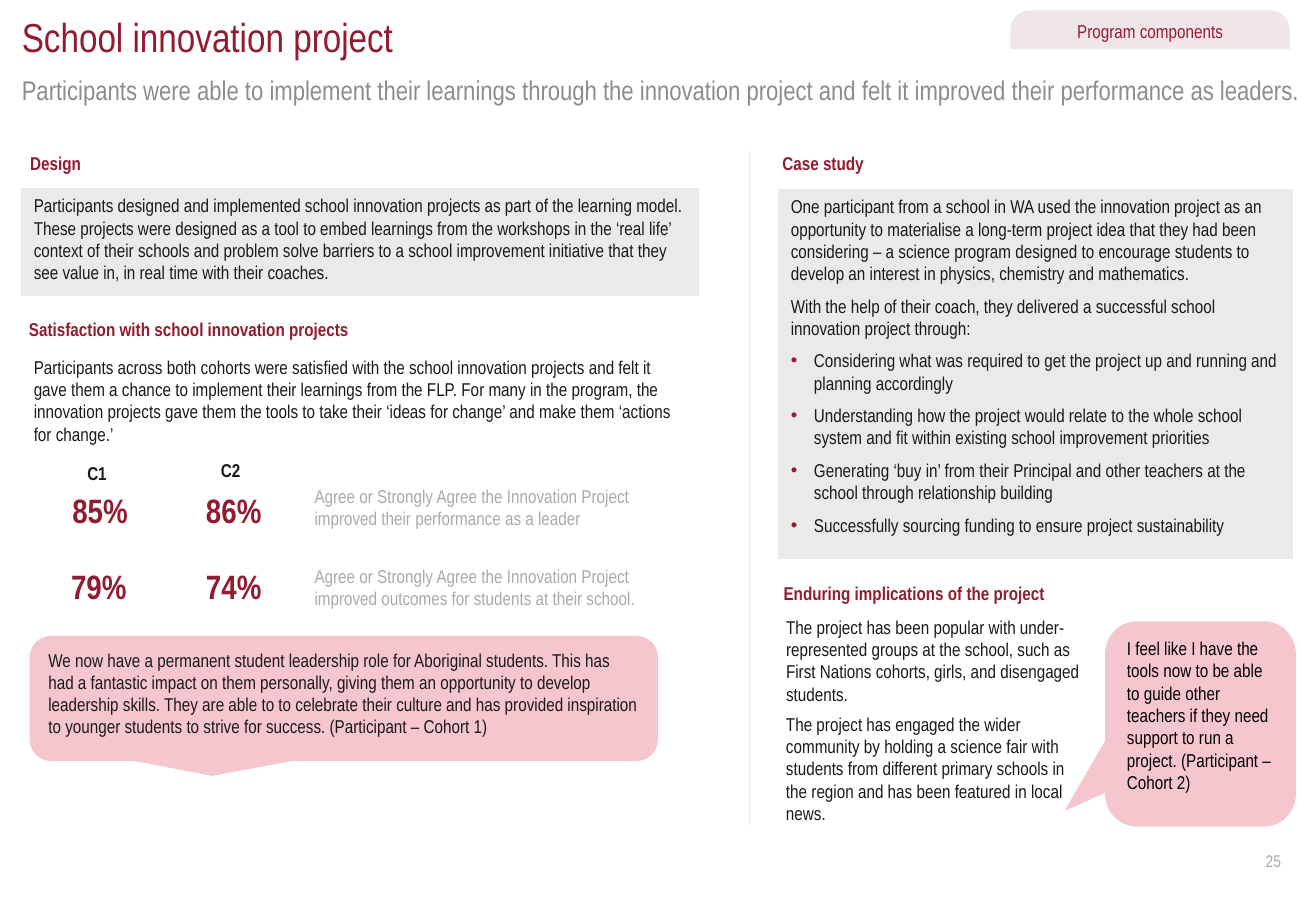
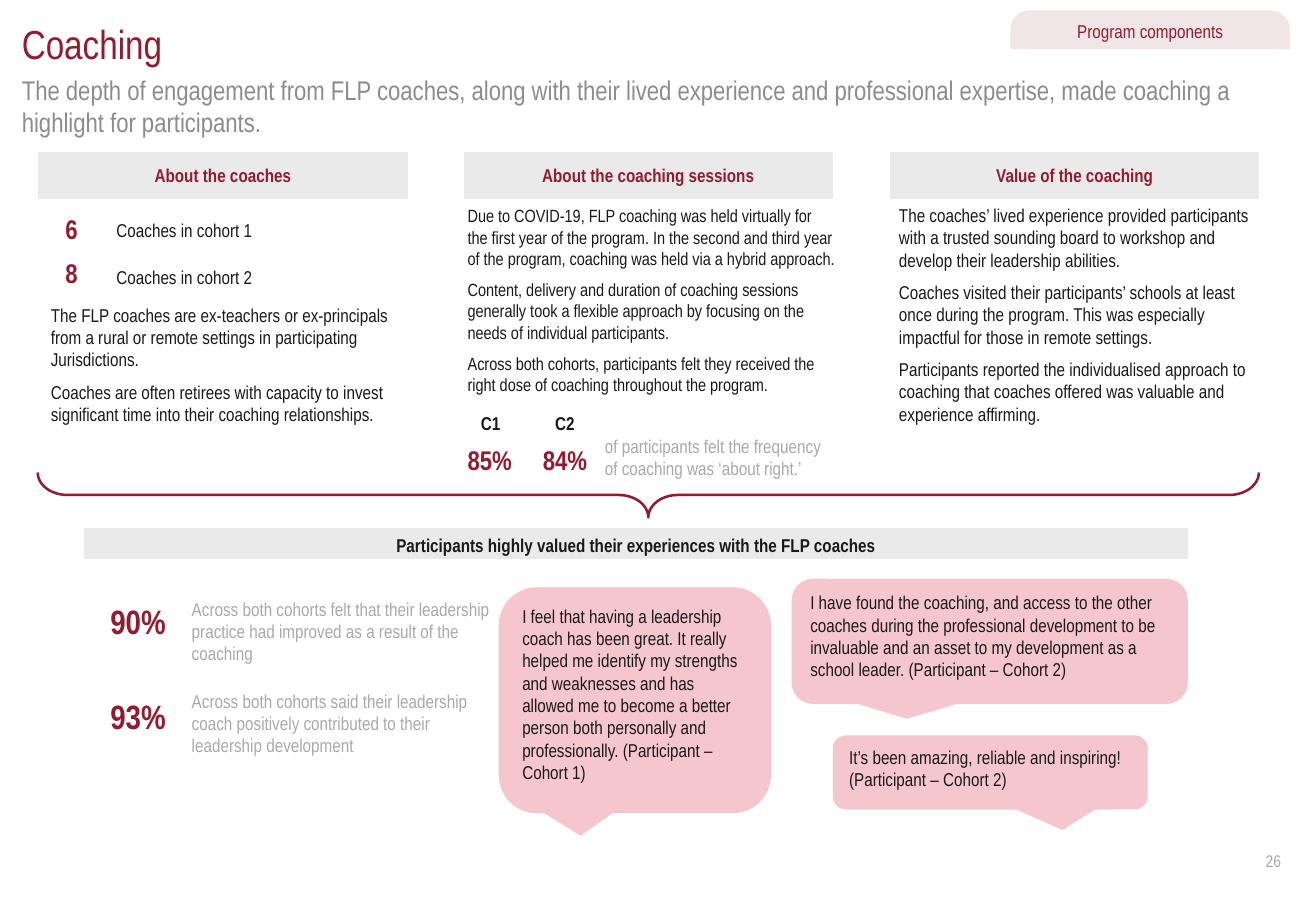
from lxml import etree
from pptx import Presentation
from pptx.dml.color import RGBColor
from pptx.enum.shapes import MSO_CONNECTOR, MSO_SHAPE
from pptx.enum.text import MSO_ANCHOR, PP_ALIGN
from pptx.oxml.ns import qn
from pptx.util import Emu, Pt

# Shared look
PX = 9144  # 100 px to the inch
FONT = "Arial Narrow"
MAROON = RGBColor(0x93, 0x1B, 0x2F)
BLUSH = RGBColor(0xF0, 0xE6, 0xE7)
PINK = RGBColor(0xF5, 0xC6, 0xCD)
PANEL = RGBColor(0xEA, 0xEA, 0xEA)
INK = RGBColor(0x19, 0x19, 0x19)
BLACK = RGBColor(0, 0, 0)
SUBTITLE = RGBColor(0x8C, 0x8C, 0x8C)
MUTED = RGBColor(0xA9, 0xA9, 0xA9)
LEFT, CENTER, RIGHT = PP_ALIGN.LEFT, PP_ALIGN.CENTER, PP_ALIGN.RIGHT
TOP, MIDDLE, BOTTOM = MSO_ANCHOR.TOP, MSO_ANCHOR.MIDDLE, MSO_ANCHOR.BOTTOM
RECT, TAB = MSO_SHAPE.RECTANGLE, MSO_SHAPE.ROUND_2_SAME_RECTANGLE
CALLOUT, BRACE = MSO_SHAPE.ROUNDED_RECTANGULAR_CALLOUT, MSO_SHAPE.RIGHT_BRACE
STRAIGHT = MSO_CONNECTOR.STRAIGHT

HEADING = dict(color=MAROON, bold=True)
LABEL = dict(bold=True, wrap=False)
FIGURE = dict(size=20, color=MAROON, bold=True)
SMALL_FIGURE = dict(size=16, color=MAROON, bold=True, wrap=False)

# Content: boxes are (left, top, width, height) in px
SECTION = "Program components"

PROJECT = dict(
    title="School innovation project", title_y=10,
    subtitle="Participants were able to implement their learnings through the innovation project "
             "and felt it improved their performance as leaders.",
    subtitle_box=(18, 61, 1057, 54), subtitle_anchor=TOP, number="25")
PROJECT_HEADINGS = [
    ("Design", (15, 120, 66, 29)),
    ("Satisfaction with school innovation projects", (14, 257, 288, 29)),
    ("Case study", (634, 120, 334, 29)),
    ("Enduring implications of the project", (635, 474, 236, 29)),
]
DESIGN = ("Participants designed and implemented school innovation projects as part of the learning "
          "model. These projects were designed as a tool to embed learnings from the workshops in the "
          "‘real life’ context of their schools and problem solve barriers to a school improvement "
          "initiative that they see value in, in real time with their coaches.")
PROJECT_TEXTS = [
    ("Participants across both cohorts were satisfied with the school innovation projects and felt it "
     "gave them a chance to implement their learnings from the FLP. For many in the program, the "
     "innovation projects gave them the tools to take their ‘ideas for change’ and make them "
     "‘actions for change.’", (18, 288, 557, 84)),
    ("The project has been popular with under-represented groups at the school, such as First Nations "
     "cohorts, girls, and disengaged students.", (637, 502, 278, 84)),
    ("The project has engaged the wider community by holding a science fair with students from "
     "different primary schools in the region and has been featured in local news.",
     (637, 582, 257, 103)),
]
PROJECT_COHORTS = [("C1", 62, 375), ("C2", 172, 373)]
PROJECT_STATS = [  # top, (figure, left) pairs, statement, statement top
    (398, [("85%", 45), ("86%", 155)],
     "Agree or Strongly Agree the Innovation Project improved their performance as a leader", 394),
    (461, [("79%", 44), ("74%", 155)],
     "Agree or Strongly Agree the Innovation Project improved outcomes for students at their school.",
     460),
]
CASE_STUDY = [
    "One participant from a school in WA used the innovation project as an opportunity to materialise "
    "a long-term project idea that they had been considering – a science program designed to "
    "encourage students to develop an interest in physics, chemistry and mathematics.",
    "With the help of their coach, they delivered a successful school innovation project through:",
    "Considering what was required to get the project up and running and planning accordingly",
    "Understanding how the project would relate to the whole school system and fit within existing "
    "school improvement priorities",
    "Generating ‘buy in’ from their Principal and other teachers at the school through relationship "
    "building",
    "Successfully sourcing funding to ensure project sustainability",
]
PROJECT_QUOTES = [  # text, box, pointer, colour
    ("We now have a permanent student leadership role for Aboriginal students. This has had a fantastic "
     "impact on them personally, giving them an opportunity to develop leadership skills. They are able "
     "to to celebrate their culture and has provided inspiration to younger students to strive for "
     "success. (Participant – Cohort 1)", (25, 524, 516, 102), (-0.21, 0.62), INK),
    ("I feel like I have the tools now to be able to guide other teachers if they need support to run a "
     "project. (Participant – Cohort 2)", (910, 512, 156, 168), (-0.71, 0.42), BLACK),
]

COACHING = dict(
    title="Coaching", title_y=16,
    subtitle="The depth of engagement from FLP coaches, along with their lived experience and "
             "professional expertise, made coaching a highlight for participants.",
    subtitle_box=(18, 60, 1047, 54), subtitle_anchor=MIDDLE, number="26")
COLUMNS = [  # heading, paragraphs, text box, size
    ("About the coaches",
     ["The FLP coaches are ex-teachers or ex-principals from a rural or remote settings in "
      "participating Jurisdictions.",
      "Coaches are often retirees with capacity to invest significant time into their coaching "
      "relationships."], (32, 245, 306, 112), 11),
    ("About the coaching sessions",
     ["Due to COVID-19, FLP coaching was held virtually for the first year of the program. In the "
      "second and third year of the program, coaching was held via a hybrid approach.",
      "Content, delivery and duration of coaching sessions generally took a flexible approach by "
      "focusing on the needs of individual participants.",
      "Across both cohorts, participants felt they received the right dose of coaching throughout "
      "the program."], (375, 164, 322, 168), 10.5),
    ("Value of the coaching",
     ["The coaches’ lived experience provided participants with a trusted sounding board to workshop "
      "and develop their leadership abilities.",
      "Coaches visited their participants’ schools at least once during the program. This was "
      "especially impactful for those in remote settings.",
      "Participants reported the individualised approach to coaching that coaches offered was "
      "valuable and experience affirming."], (730, 163, 324, 194), 11),
]
COACH_COUNTS = [("6", 170, "Coaches in cohort 1", 175), ("8", 206, "Coaches in cohort 2", 214)]
FREQUENCY = [("C1", 386, "85%", 375), ("C2", 447, "84%", 437)]
FREQUENCY_NOTE = "of participants felt the frequency of coaching was ‘about right.’"
SUMMARY = "Participants highly valued their experiences with the FLP coaches"
OUTCOMES = [
    ("90%", 490, "Across both cohorts felt that their leadership practice had improved as a result of "
     "the coaching", (148, 487, 287, 66)),
    ("93%", 568, "Across both cohorts said their leadership coach positively contributed to their "
     "leadership development", (148, 563, 256, 66)),
]
COACHING_QUOTES = [
    ("I feel that having a leadership coach has been great. It really helped me identify my strengths "
     "and weaknesses and has allowed me to become a better person both personally and professionally. "
     "(Participant – Cohort 1)", (411, 484, 223, 185), (-0.2, 0.6), INK),
    ("I have found the coaching, and access to the other coaches during the professional development "
     "to be invaluable and an asset to my development as a school leader. (Participant – Cohort 2)",
     (652, 477, 325, 102), (-0.21, 0.62), INK),
    ("It’s been amazing, reliable and inspiring! (Participant – Cohort 2)",
     (686, 606, 258, 60), (0.23, 0.78), INK),
]


def emu(box):
    return [Emu(v * PX) for v in box]


def add_bullet(p):
    pPr = p._p.get_or_add_pPr()
    pPr.set("marL", str(19 * PX))
    pPr.set("indent", str(-19 * PX))
    clr = etree.SubElement(pPr, qn("a:buClr"))
    etree.SubElement(clr, qn("a:srgbClr")).set("val", str(MAROON))
    etree.SubElement(pPr, qn("a:buFont")).set("typeface", "Arial")
    etree.SubElement(pPr, qn("a:buChar")).set("char", "•")


def add_text(slide, text, box, size=11, color=INK, bold=False, align=LEFT, anchor=TOP, wrap=True,
             inset=True, after=6, shape=None, fill=None, adj=(), bullets_from=None):
    """Add a text box, or a filled shape with text; text is a string or a list of paragraphs."""
    if shape is None:
        sp = slide.shapes.add_textbox(*emu(box))
    else:
        sp = slide.shapes.add_shape(shape, *emu(box))
        sp.shadow.inherit = False
        sp.fill.solid()
        sp.fill.fore_color.rgb = fill
        sp.line.color.rgb = fill
        sp.line.width = Pt(0.75)
        for i, value in enumerate(adj):
            sp.adjustments[i] = value
    tf = sp.text_frame
    tf.word_wrap = wrap
    tf.vertical_anchor = anchor
    if not inset:
        tf.margin_left = tf.margin_top = tf.margin_right = tf.margin_bottom = 0
    for i, line in enumerate([text] if isinstance(text, str) else text):
        p = tf.add_paragraph() if i else tf.paragraphs[0]
        if bullets_from is not None and i >= bullets_from:
            add_bullet(p)
        p.alignment = align
        p.space_after = Pt(after)
        r = p.add_run()
        r.text = line
        r.font.name = FONT
        r.font.size = Pt(size)
        r.font.bold = bold
        r.font.color.rgb = color
    return sp


def add_quotes(slide, quotes):
    for text, box, pointer, color in quotes:
        add_text(slide, text, box, color=color, shape=CALLOUT, fill=PINK, adj=pointer)


def add_base(prs, title, title_y, subtitle, subtitle_box, subtitle_anchor, number):
    """Start a slide with its title, subtitle, section tab and page number."""
    s = prs.slides.add_slide(prs.slide_layouts[6])
    add_text(s, title, (18, title_y, 1047, 40), size=24, color=MAROON, inset=False, after=0)
    add_text(s, SECTION, (832, 9, 229, 31), color=MAROON, align=CENTER, anchor=BOTTOM,
             shape=TAB, fill=BLUSH, adj=(0.5, 0))
    add_text(s, subtitle, subtitle_box, size=16, color=SUBTITLE, anchor=subtitle_anchor, inset=False)
    add_text(s, number, (1027, 689, 37, 40), size=10, color=MUTED, align=RIGHT, anchor=MIDDLE, after=0)
    return s


def build_project(prs):
    s = add_base(prs, **PROJECT)
    for text, box in PROJECT_HEADINGS:
        add_text(s, text, box, wrap=True if box[2] > 300 else False, **HEADING)
    add_text(s, DESIGN, (18, 155, 557, 88), shape=RECT, fill=PANEL)
    add_text(s, CASE_STUDY, (641, 156, 423, 304), shape=RECT, fill=PANEL, bullets_from=2)
    for text, box in PROJECT_TEXTS:
        add_text(s, text, box)
    # Survey figures
    for cohort, x, y in PROJECT_COHORTS:
        add_text(s, cohort, (x, y, 36, 29), **LABEL)
    for y, figures, statement, statement_y in PROJECT_STATS:
        for figure, x in figures:
            add_text(s, figure, (x, y, 70, 44), align=RIGHT, **FIGURE)
        add_text(s, statement, (249, statement_y, 320, 47), color=MUTED)
    add_quotes(s, PROJECT_QUOTES)
    # Column divider
    line = s.shapes.add_connector(STRAIGHT, *emu((617, 124, 617, 680)))
    line.line.color.rgb = PANEL
    line.line.width = Pt(0.75)
    etree.SubElement(line._element.spPr, qn("a:effectLst"))


def build_coaching(prs):
    s = add_base(prs, **COACHING)
    # Three columns
    for i, (heading, paragraphs, box, size) in enumerate(COLUMNS):
        add_text(s, heading, (32 + round(350.5 * i), 126, 303, 37), align=CENTER, anchor=MIDDLE,
                 shape=RECT, fill=PANEL, **HEADING)
        add_text(s, paragraphs, box, size=size)
    for count, y, label, label_y in COACH_COUNTS:
        add_text(s, count, (44, y, 30, 37), **SMALL_FIGURE)
        add_text(s, label, (86, label_y, 132, 29), wrap=False)
    for cohort, x, figure, figure_x in FREQUENCY:
        add_text(s, cohort, (x, 334, 36, 29), **LABEL)
        add_text(s, figure, (figure_x, 360, 57, 37), **SMALL_FIGURE)
    add_text(s, FREQUENCY_NOTE, (488, 353, 204, 47), color=MUTED)
    # Brace and summary
    brace = s.shapes.add_shape(BRACE, *emu((515, -95, 37, 1005)))
    brace.rotation = 90
    brace.adjustments[0] = 0.66
    brace.shadow.inherit = False
    brace.fill.background()
    brace.line.color.rgb = MAROON
    brace.line.width = Pt(1.5)
    add_text(s, SUMMARY, (70, 435, 907, 25), bold=True, align=CENTER, shape=RECT, fill=PANEL)
    for figure, y, statement, box in OUTCOMES:
        add_text(s, figure, (81, y, 66, 44), wrap=False, **FIGURE)
        add_text(s, statement, box, color=MUTED)
    add_quotes(s, COACHING_QUOTES)


def main():
    prs = Presentation()
    prs.slide_width, prs.slide_height = emu((1083, 750))
    build_project(prs)
    build_coaching(prs)
    prs.save("out.pptx")


if __name__ == "__main__":
    main()
